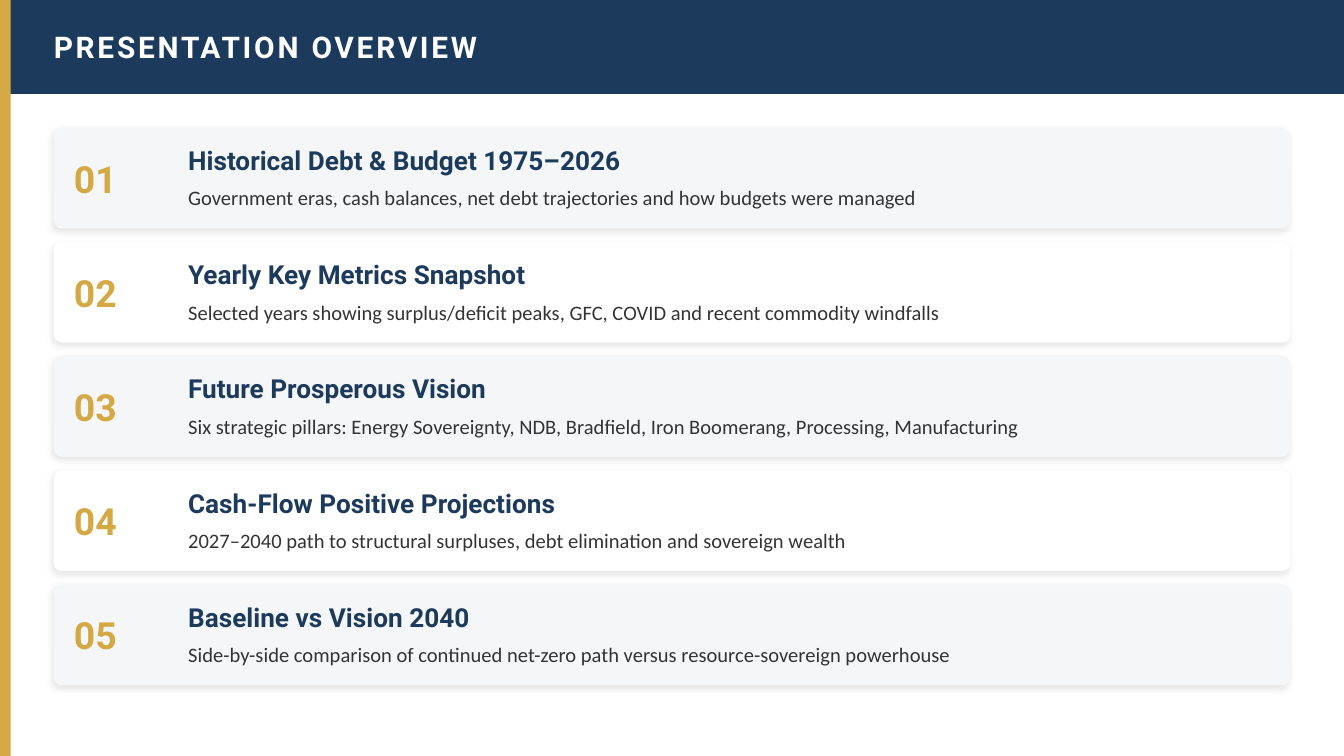
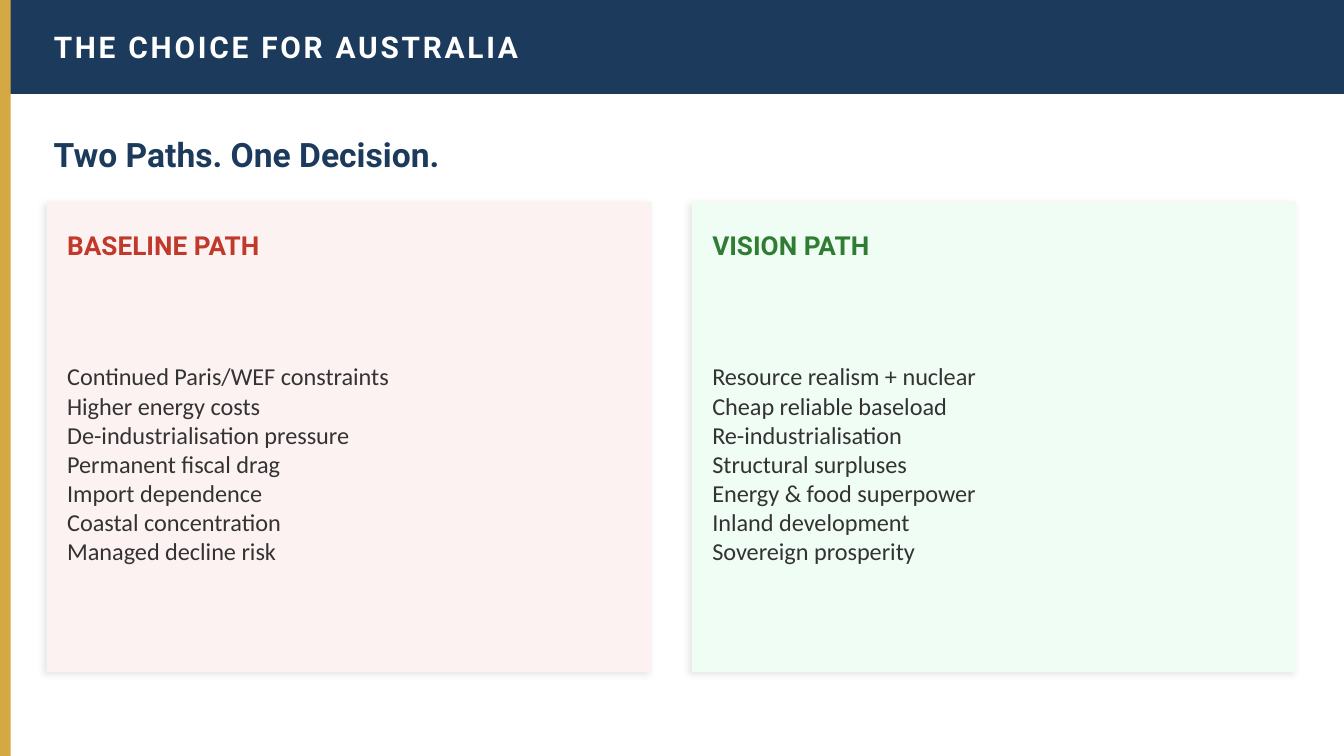
from dataclasses import dataclass

import lxml.etree
import pptx
import pptx.dml.color
import pptx.enum.shapes
import pptx.enum.text
import pptx.oxml.ns
import pptx.presentation
import pptx.shapes.autoshape
import pptx.slide
import pptx.text.text
import pptx.util

Pt = pptx.util.Pt
Shape = pptx.shapes.autoshape.Shape
Slide = pptx.slide.Slide
MSO_SHAPE = pptx.enum.shapes.MSO_SHAPE
qn = pptx.oxml.ns.qn


@dataclass(frozen=True)
class Style:
    size: float
    color: str
    font: str = "Roboto"
    bold: bool = True
    spacing: float = 0


@dataclass(frozen=True)
class Theme:
    navy: str = "1B3A5C"
    gold: str = "D4A843"
    white: str = "FFFFFF"
    grey: str = "F5F6F8"
    ink: str = "333333"
    red: str = "C0392B"
    pale_red: str = "FDF2F2"
    green: str = "2E7D32"
    pale_green: str = "F0FDF4"
    body_font: str = "Calibri"
    title_size: float = 16
    tagline_size: float = 18
    number_size: float = 20
    heading_size: float = 14
    detail_size: float = 11
    list_size: float = 13


@dataclass(frozen=True)
class Box:
    """Left, top, width and height in points."""
    left: float
    top: float
    width: float
    height: float

    def lengths(self) -> tuple[pptx.util.Length, ...]:
        return Pt(self.left), Pt(self.top), Pt(self.width), Pt(self.height)


@dataclass(frozen=True)
class Topic:
    heading: str
    detail: str


@dataclass(frozen=True)
class Path:
    heading: str
    color: str
    fill: str
    points: tuple[str, ...]


THEME = Theme()
SLIDE_W, SLIDE_H = 720, 405
MARGIN = 28.8
CONTENT_W = SLIDE_W - 2 * MARGIN
BAND_H = 50.4
CONTENT_TOP = 68.4

TITLE = Style(THEME.title_size, THEME.white, spacing=1.5)
TAGLINE = Style(THEME.tagline_size, THEME.navy)
NUMBER = Style(THEME.number_size, THEME.gold)
HEADING = Style(THEME.heading_size, THEME.navy)
DETAIL = Style(THEME.detail_size, THEME.ink, THEME.body_font, bold=False)
POINTS = Style(THEME.list_size, THEME.ink, THEME.body_font, bold=False)

TOPICS = (
    Topic("Historical Debt & Budget 1975–2026",
          "Government eras, cash balances, net debt trajectories and how budgets were managed"),
    Topic("Yearly Key Metrics Snapshot",
          "Selected years showing surplus/deficit peaks, GFC, COVID and recent commodity windfalls"),
    Topic("Future Prosperous Vision",
          "Six strategic pillars: Energy Sovereignty, NDB, Bradfield, Iron Boomerang, "
          "Processing, Manufacturing"),
    Topic("Cash-Flow Positive Projections",
          "2027–2040 path to structural surpluses, debt elimination and sovereign wealth"),
    Topic("Baseline vs Vision 2040",
          "Side-by-side comparison of continued net-zero path versus "
          "resource-sovereign powerhouse"),
)
PATHS = (
    Path("BASELINE PATH", THEME.red, THEME.pale_red, (
        "Continued Paris/WEF constraints", "Higher energy costs",
        "De-industrialisation pressure", "Permanent fiscal drag",
        "Import dependence", "Coastal concentration", "Managed decline risk")),
    Path("VISION PATH", THEME.green, THEME.pale_green, (
        "Resource realism + nuclear", "Cheap reliable baseload",
        "Re-industrialisation", "Structural surpluses",
        "Energy & food superpower", "Inland development", "Sovereign prosperity")),
)


def rgb(color: str) -> pptx.dml.color.RGBColor:
    return pptx.dml.color.RGBColor.from_string(color)


def write(tf: pptx.text.text.TextFrame, style: Style, *lines: str) -> None:
    """Fill a frame with one paragraph per line, without insets and centred in height."""
    tf.margin_left = tf.margin_top = tf.margin_right = tf.margin_bottom = 0
    tf.vertical_anchor = pptx.enum.text.MSO_ANCHOR.MIDDLE
    tf.auto_size = pptx.enum.text.MSO_AUTO_SIZE.NONE
    tf.word_wrap = True
    tf.text = "\n".join(lines)
    for p in tf.paragraphs:
        p.alignment = pptx.enum.text.PP_ALIGN.LEFT
        p.font.name = style.font
        p.font.size = Pt(style.size)
        p.font.bold = style.bold
        p.font.color.rgb = rgb(style.color)
        if style.spacing:
            p.font._element.set("spc", str(int(style.spacing * 100)))


def add_text(s: Slide, box: Box, style: Style, *lines: str) -> None:
    write(s.shapes.add_textbox(*box.lengths()).text_frame, style, *lines)


def add_panel(s: Slide, box: Box, fill: str,
              kind: MSO_SHAPE = MSO_SHAPE.RECTANGLE) -> Shape:
    sp = s.shapes.add_shape(kind, *box.lengths())
    sp.shadow.inherit = False
    sp.fill.solid()
    sp.fill.fore_color.rgb = rgb(fill)
    sp.line.fill.background()
    return sp


def add_soft_shadow(sp: Shape) -> None:
    effects = sp._element.spPr.find(qn("a:effectLst"))
    shadow = lxml.etree.SubElement(
        effects, qn("a:outerShdw"), blurRad=str(Pt(4)), dist=str(Pt(2)),
        dir=str(135 * 60000), algn="bl", rotWithShape="0")
    color = lxml.etree.SubElement(shadow, qn("a:srgbClr"), val="000000")
    lxml.etree.SubElement(color, qn("a:alpha"), val="10000")


def add_slide(prs: pptx.presentation.Presentation, title: str) -> Slide:
    """Add a slide with the title band and the gold edge."""
    s = prs.slides.add_slide(prs.slide_layouts[5])
    band = add_panel(s, Box(0, 0, SLIDE_W, BAND_H), THEME.navy)
    sp = s.shapes.title
    sp._element.addprevious(band._element)
    sp.left, sp.top, sp.width, sp.height = Box(MARGIN, 0, CONTENT_W, BAND_H).lengths()
    write(sp.text_frame, TITLE, title)
    add_panel(s, Box(0, 0, 5.76, SLIDE_H), THEME.gold)
    return s


def add_topic(s: Slide, index: int, topic: Topic) -> None:
    top = CONTENT_TOP + index * 61.2
    fill = THEME.white if index % 2 else THEME.grey
    card = add_panel(s, Box(MARGIN, top, CONTENT_W, 54), fill, MSO_SHAPE.ROUNDED_RECTANGLE)
    card.adjustments[0] = 0.08
    add_soft_shadow(card)
    add_text(s, Box(39.6, top + 7.2, 50.4, 39.6), NUMBER, f"{index + 1:02d}")
    add_text(s, Box(100.8, top + 5.76, 561.6, 23.04), HEADING, topic.heading)
    add_text(s, Box(100.8, top + 27.36, 561.6, 20.16), DETAIL, topic.detail)


def add_path(s: Slide, index: int, path: Path) -> None:
    left, top, width, inset = 25.2 + index * 345.6, 108, 324, 10.8
    add_soft_shadow(add_panel(s, Box(left, top, width, 252), path.fill))
    text_left, text_w = left + inset, width - 2 * inset
    add_text(s, Box(text_left, top + inset, text_w, 25.2),
             Style(THEME.heading_size, path.color), path.heading)
    add_text(s, Box(text_left, top + 46.8, text_w, 187.2), POINTS, *path.points)


def build_overview(prs: pptx.presentation.Presentation) -> None:
    s = add_slide(prs, "PRESENTATION OVERVIEW")
    for i, topic in enumerate(TOPICS):
        add_topic(s, i, topic)


def build_choice(prs: pptx.presentation.Presentation) -> None:
    s = add_slide(prs, "THE CHOICE FOR AUSTRALIA")
    add_text(s, Box(MARGIN, CONTENT_TOP, 648, 28.8), TAGLINE, "Two Paths. One Decision.")
    for i, path in enumerate(PATHS):
        add_path(s, i, path)


def main() -> None:
    prs = pptx.Presentation()
    prs.slide_width, prs.slide_height = Pt(SLIDE_W), Pt(SLIDE_H)
    build_overview(prs)
    build_choice(prs)
    prs.save("out.pptx")


if __name__ == "__main__":
    main()
